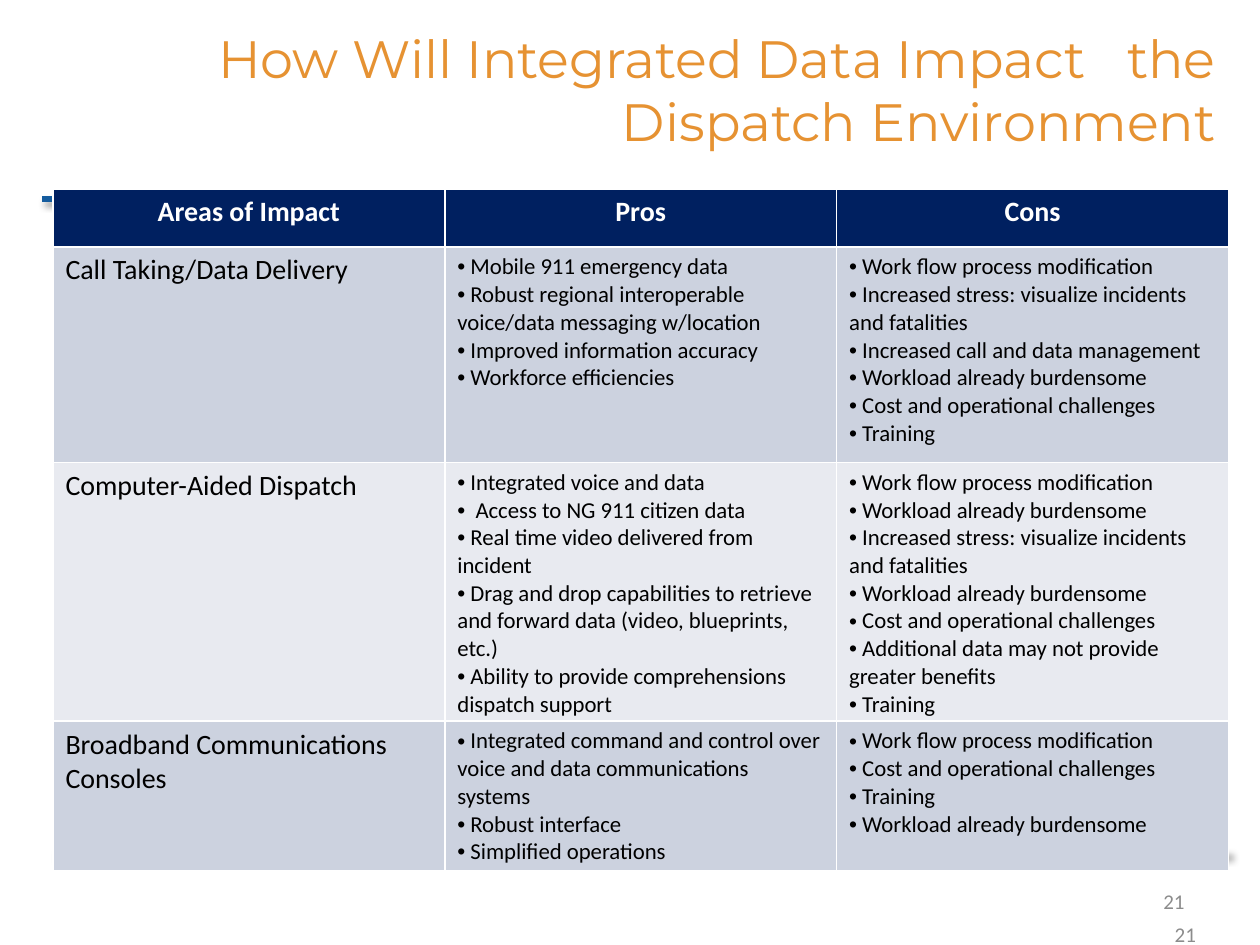
from lxml import etree
from pptx import Presentation
from pptx import util as u
from pptx.dml.color import RGBColor
from pptx.enum import shapes, text
from pptx.oxml import ns

Inches = u.Inches
ALIGN = text.PP_ALIGN


def color(value):
    return RGBColor.from_string(value)


def add_run(paragraph, words, size, hex_color, font="Calibri", bold=False):
    run = paragraph.add_run()
    run.text = words
    run.font.size = u.Pt(size)
    run.font.name = font
    run.font.bold = bold
    run.font.color.rgb = color(hex_color)


presentation = Presentation()
presentation.slide_width, presentation.slide_height = Inches(10), Inches(7.5)
slide = presentation.slides.add_slide(presentation.slide_layouts[6])

# Rules above and below the table: right end, left end, height, shadow angle
for right, left, y, angle in [(9.67, 0.33, 1.58, 45), (9.75, 0.42, 6.83, 315)]:
    rule = slide.shapes.add_connector(
        shapes.MSO_CONNECTOR.STRAIGHT, Inches(right), Inches(y), Inches(left), Inches(y))
    rule.line.color.rgb = color("155C9E")
    rule.line.width = u.Pt(3)
    effects = etree.SubElement(rule._element.spPr, ns.qn("a:effectLst"))
    shadow = etree.SubElement(
        effects, ns.qn("a:outerShdw"), blurRad=str(u.Pt(4)), dist=str(u.Pt(3)),
        dir=str(angle * 60000), algn="ctr", rotWithShape="0")
    shadow_color = etree.SubElement(shadow, ns.qn("a:srgbClr"), val="000000")
    etree.SubElement(shadow_color, ns.qn("a:alpha"), val="40000")

# Title and the two page numbers
title = "How Will Integrated Data Impact   the Dispatch Environment"
for words, left, top, width, height, size, hex_color, font in [
    ("21", 7.17, 6.95, 2.33, 0.4, 12, "8C8C8C", "Calibri"),
    (title, 1.25, 0.33, 8.5, 0.75, 30, "E69232", "Montserrat"),
    ("21", 8.67, 7.33, 0.92, 0.17, 12, "8C8C8C", "Calibri"),
]:
    box = slide.shapes.add_textbox(Inches(left), Inches(top), Inches(width), Inches(height))
    frame = box.text_frame
    frame.word_wrap = True
    frame.vertical_anchor = text.MSO_ANCHOR.MIDDLE
    frame.paragraphs[0].alignment = ALIGN.RIGHT
    add_run(frame.paragraphs[0], words, size, hex_color, font)

# Impact table
headings = ["Areas of Impact", "Pros", "Cons"]
areas = [
    ("Call Taking/Data Delivery",
     [" Mobile 911 emergency data",
      " Robust regional interoperable voice/data messaging w/location",
      " Improved information accuracy",
      " Workforce efficiencies"],
     [" Work flow process modification",
      " Increased stress: visualize incidents and fatalities",
      " Increased call and data management",
      " Workload already burdensome",
      " Cost and operational challenges",
      " Training"]),
    ("Computer-Aided Dispatch",
     [" Integrated voice and data",
      "  Access to NG 911 citizen data",
      " Real time video delivered from incident",
      " Drag and drop capabilities to retrieve and forward data (video, blueprints, etc.)",
      " Ability to provide comprehensions dispatch support"],
     [" Work flow process modification",
      " Workload already burdensome",
      " Increased stress: visualize incidents and fatalities",
      " Workload already burdensome",
      " Cost and operational challenges",
      " Additional data may not provide greater benefits",
      " Training"]),
    ("Broadband Communications Consoles",
     [" Integrated command and control over voice and data communications systems",
      " Robust interface",
      " Simplified operations"],
     [" Work flow process modification",
      " Cost and operational challenges",
      " Training",
      " Workload already burdensome"]),
]
table = slide.shapes.add_table(
    len(areas) + 1, len(headings), Inches(0.42), Inches(1.5), Inches(9.33), Inches(5.24)).table
for row, height in zip(table.rows, [0.46, 1.71, 2.05, 1.02]):
    row.height = Inches(height)
for column in table.columns:
    column.width = Inches(3.11)

for column_index, heading in enumerate(headings):
    cell = table.cell(0, column_index)
    cell.fill.solid()
    cell.fill.fore_color.rgb = color("002060")
    paragraph = cell.text_frame.paragraphs[0]
    paragraph.alignment = ALIGN.CENTER
    add_run(paragraph, heading, 16, "FFFFFF", bold=True)

for row_index, (area, pros, cons) in enumerate(areas, start=1):
    for column_index, lines in enumerate([[area], pros, cons]):
        cell = table.cell(row_index, column_index)
        cell.fill.solid()
        cell.fill.fore_color.rgb = color("CCD2DF" if row_index % 2 else "E8EAF0")
        frame = cell.text_frame
        for line_index, line in enumerate(lines):
            paragraph = frame.add_paragraph() if line_index else frame.paragraphs[0]
            if column_index:
                properties = paragraph._p.get_or_add_pPr()
                etree.SubElement(properties, ns.qn("a:buFont"), typeface="Arial")
                etree.SubElement(properties, ns.qn("a:buChar"), char="•")
            add_run(paragraph, line, 13 if column_index else 16, "000000")

presentation.save("out.pptx")
